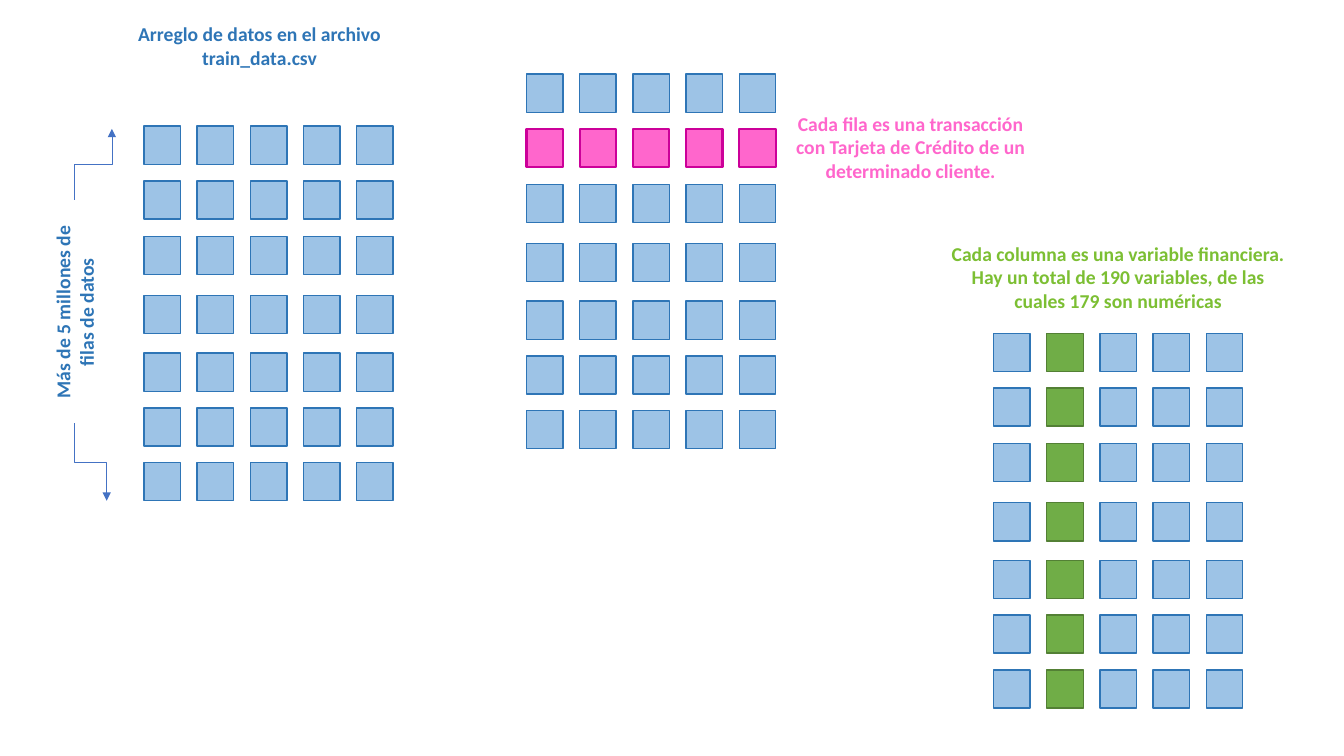
import pptx
import pptx.dml.color
import pptx.enum.shapes
import pptx.enum.text
import pptx.oxml
import pptx.oxml.ns
import pptx.util

Cm = pptx.util.Cm
Pt = pptx.util.Pt
RGBColor = pptx.dml.color.RGBColor

FONT = "Calibri"
BLUE_FILL = RGBColor(0x9D, 0xC3, 0xE6)
BLUE_DARK = RGBColor(0x2E, 0x75, 0xB6)
PINK_FILL = RGBColor(0xFF, 0x66, 0xCC)
PINK_DARK = RGBColor(0xCC, 0x00, 0x99)
GREEN_FILL = RGBColor(0x70, 0xAD, 0x47)
GREEN_DARK = RGBColor(0x53, 0x80, 0x35)
GREEN_TEXT = RGBColor(0x7C, 0xBF, 0x33)
ARROW_BLUE = RGBColor(0x44, 0x72, 0xC4)

# Each cell style is fill, line colour and line width in points
PLAIN = (BLUE_FILL, BLUE_DARK, 1)
ROW_STYLE = (PINK_FILL, PINK_DARK, 1.5)
COLUMN_STYLE = (GREEN_FILL, GREEN_DARK, 1)

# Grid geometry in centimetres
CELL_WIDTH, CELL_HEIGHT = 0.92, 0.96
COLUMN_COUNT, COLUMN_PITCH = 5, 1.34
ROW_OFFSETS = (0, 1.38, 2.78, 4.27, 5.72, 7.1, 8.48)


def add_cell(group, left, top, style):
    fill, line, width = style
    cell = group.shapes.add_shape(
        pptx.enum.shapes.MSO_SHAPE.RECTANGLE,
        Cm(left), Cm(top), Cm(CELL_WIDTH), Cm(CELL_HEIGHT))
    cell.shadow.inherit = False
    cell.fill.solid()
    cell.fill.fore_color.rgb = fill
    cell.line.color.rgb = line
    cell.line.width = Pt(width)


def add_data_grid(slide, left, top, pink_row=None, green_column=None):
    group = slide.shapes.add_group_shape()
    for row, offset in enumerate(ROW_OFFSETS):
        for column in range(COLUMN_COUNT):
            style = PLAIN
            if row == pink_row:
                style = ROW_STYLE
            elif column == green_column:
                style = COLUMN_STYLE
            add_cell(group, left + column * COLUMN_PITCH, top + offset, style)


def format_label(shape, text, color):
    text_frame = shape.text_frame
    text_frame.text = text
    text_frame.word_wrap = True
    text_frame.auto_size = pptx.enum.text.MSO_AUTO_SIZE.SHAPE_TO_FIT_TEXT
    text_frame.vertical_anchor = pptx.enum.text.MSO_ANCHOR.TOP
    paragraph = text_frame.paragraphs[0]
    paragraph.alignment = pptx.enum.text.PP_ALIGN.CENTER
    font = paragraph.runs[0].font
    font.name = FONT
    font.size = Pt(14)
    font.bold = True
    font.color.rgb = color


def place_title(slide, text, left, top, width, height):
    title = slide.shapes.title
    title.left, title.top = Cm(left), Cm(top)
    title.width, title.height = Cm(width), Cm(height)
    format_label(title, text, BLUE_DARK)


def add_label(slide, text, color, left, top, width, height, rotation=0):
    label = slide.shapes.add_textbox(Cm(left), Cm(top), Cm(width), Cm(height))
    label.rotation = rotation
    format_label(label, text, color)


def add_vertical_elbow(slide, begin, end):
    """Elbow arrow that leaves and arrives vertically: a quarter-turned elbow."""
    (begin_x, begin_y), (end_x, end_y) = begin, end
    center_x, center_y = (begin_x + end_x) / 2, (begin_y + end_y) / 2
    half_length = abs(end_y - begin_y) / 2
    goes_down = end_y > begin_y
    half_width = (end_x - begin_x) / 2 * (1 if goes_down else -1)
    arrow = slide.shapes.add_connector(
        pptx.enum.shapes.MSO_CONNECTOR.ELBOW,
        Cm(center_x + half_length), Cm(center_y - half_width),
        Cm(center_x - half_length), Cm(center_y + half_width))
    arrow.line.color.rgb = ARROW_BLUE
    arrow.line.width = Pt(0.5)

    # Rotation, arrowhead and empty effect list
    properties = arrow.element.spPr
    degrees = 270 if goes_down else 90
    properties.find(pptx.oxml.ns.qn("a:xfrm")).set("rot", str(degrees * 60000))
    namespace = pptx.oxml.ns.nsdecls("a")
    line = properties.find(pptx.oxml.ns.qn("a:ln"))
    line.append(pptx.oxml.parse_xml(f'<a:tailEnd {namespace} type="triangle"/>'))
    properties.append(pptx.oxml.parse_xml(f"<a:effectLst {namespace}/>"))


def main():
    presentation = pptx.Presentation()
    presentation.slide_width = Cm(33.87)
    presentation.slide_height = Cm(19.05)
    slide = presentation.slides.add_slide(presentation.slide_layouts[5])

    # Whole data set
    place_title(slide, "Arreglo de datos en el archivo train_data.csv",
                3.15, 0.43, 6.78, 1.45)
    add_data_grid(slide, 3.63, 3.18)
    add_label(slide, "Más de 5 millones de filas de datos", BLUE_DARK,
              -0.94, 7.14, 5.64, 1.45, rotation=270)
    add_vertical_elbow(slide, (1.88, 10.67), (2.69, 12.62))
    add_vertical_elbow(slide, (1.88, 5.03), (2.82, 3.25))

    # One row highlighted
    add_data_grid(slide, 13.27, 1.87, pink_row=1)
    add_label(slide, "Cada fila es una transacción con Tarjeta de Crédito "
              "de un determinado cliente.", PINK_FILL, 19.56, 2.69, 6.78, 2.06)

    # One column highlighted
    add_label(slide, "Cada columna es una variable financiera. Hay un total de "
              "190 variables, de las cuales 179 son numéricas", GREEN_TEXT,
              23.72, 5.97, 8.92, 2.06)
    add_data_grid(slide, 25.04, 8.4, green_column=1)

    presentation.save("out.pptx")


if __name__ == "__main__":
    main()
